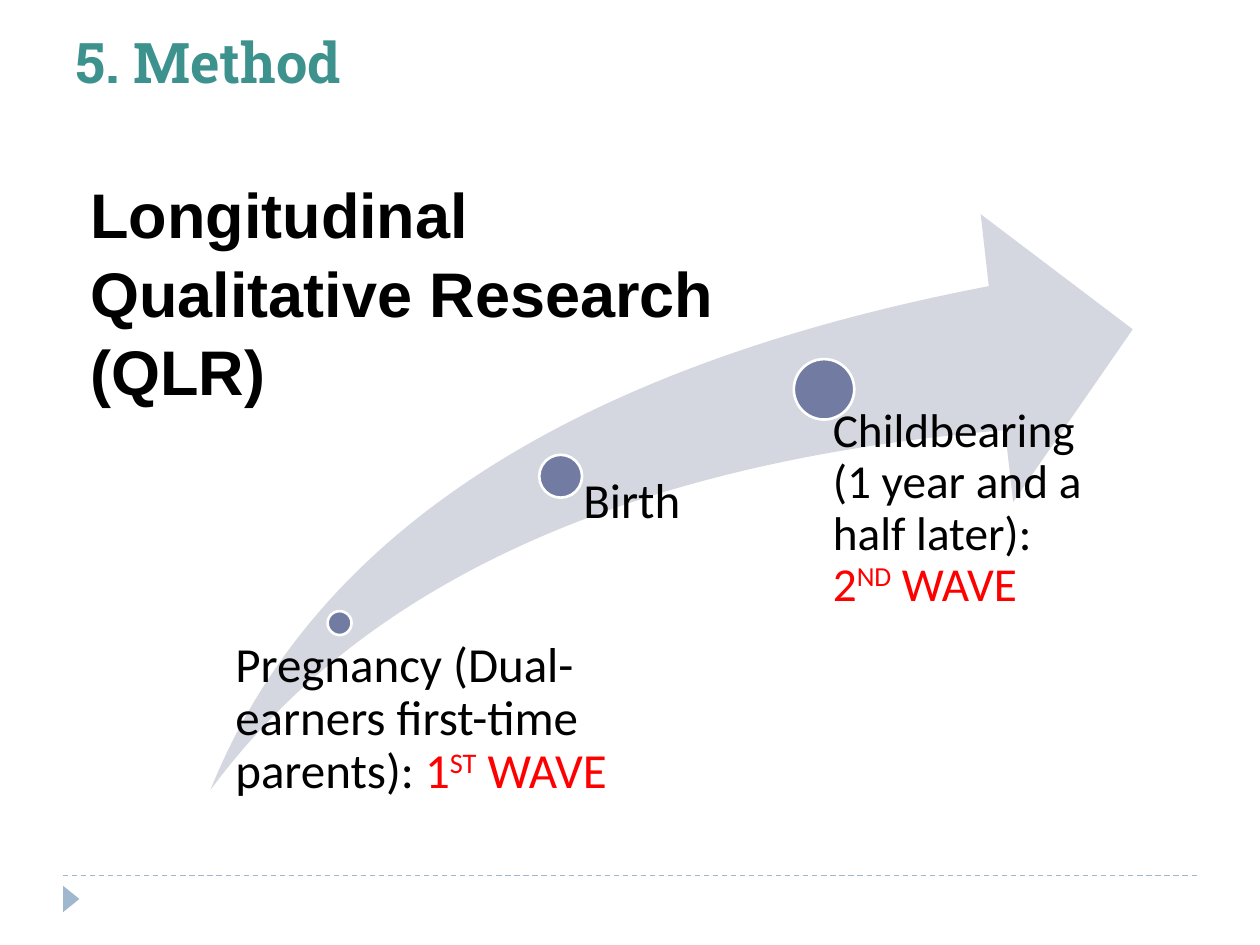
from lxml import etree
from pptx import Presentation
from pptx.dml.color import RGBColor
from pptx.enum.dml import MSO_LINE
from pptx.enum.shapes import MSO_CONNECTOR, MSO_SHAPE
from pptx.enum.text import MSO_ANCHOR, PP_ALIGN
from pptx.oxml.ns import qn
from pptx.util import Pt

PX = 9144  # EMU per px, 100 px to the inch
TITLE_ONLY = 5
SWOOSH = MSO_SHAPE.SWOOSH_ARROW
CIRCLE = MSO_SHAPE.OVAL
TRIANGLE = MSO_SHAPE.ISOSCELES_TRIANGLE
STRAIGHT = MSO_CONNECTOR.STRAIGHT
DASH = MSO_LINE.DASH
LEFT = PP_ALIGN.LEFT
TOP, MIDDLE = MSO_ANCHOR.TOP, MSO_ANCHOR.MIDDLE

COLORS = {
    "title": "3E928E",
    "text": "000000",
    "wave": "FF0000",
    "arrow": "D5D7E0",
    "dot": "727CA3",
    "outline": "FFFFFF",
    "footer": "9FB8CD",
}


def color(name):
    return RGBColor.from_string(COLORS[name])


class SlideBuilder:
    def __init__(self, slide, body_font):
        self.slide = slide
        self.shapes = slide.shapes
        self.body_font = body_font

    def add_runs(self, frame, runs, size, font=None, bold=False, anchor=TOP,
                 insets=(10, 5, 10, 5), spacing=1.0):
        """Fill a frame with one paragraph of (text, colour, baseline) runs."""
        frame.word_wrap = True
        frame.vertical_anchor = anchor
        (frame.margin_left, frame.margin_top,
         frame.margin_right, frame.margin_bottom) = [n * PX for n in insets]
        paragraph = frame.paragraphs[0]
        paragraph.alignment = LEFT
        paragraph.line_spacing = spacing
        for text, tint, baseline in runs:
            run = paragraph.add_run()
            run.text = text
            run.font.name = font or self.body_font
            run.font.size = Pt(size)
            run.font.bold = bold
            run.font.color.rgb = color(tint)
            if baseline:
                run._r.get_or_add_rPr().set("baseline", str(baseline * 1000))

    def title(self, box, runs, **style):
        title = self.shapes.title
        title.left, title.top, title.width, title.height = [n * PX for n in box]
        self.add_runs(title.text_frame, runs, **style)

    def text(self, box, runs, **style):
        textbox = self.shapes.add_textbox(*[n * PX for n in box])
        self.add_runs(textbox.text_frame, runs, **style)

    def shape(self, kind, box, fill, outline=None, rotation=0, adjustments=()):
        shape = self.shapes.add_shape(kind, *[n * PX for n in box])
        shape.shadow.inherit = False
        shape.rotation = rotation
        for index, value in enumerate(adjustments):
            shape.adjustments[index] = value
        shape.fill.solid()
        shape.fill.fore_color.rgb = color(fill)
        if outline:
            shape.line.color.rgb = color(outline)
            shape.line.width = Pt(1.5)
        else:
            shape.line.fill.background()

    def dashed_line(self, start, end, tint):
        line = self.shapes.add_connector(STRAIGHT, *[n * PX for n in start + end])
        line.line.color.rgb = color(tint)
        line.line.width = Pt(0.75)
        line.line.dash_style = DASH
        etree.SubElement(line._element.spPr, qn("a:effectLst"))


def wave(number, suffix):
    return [(number, "wave", 0), (suffix, "wave", 30), (" WAVE", "wave", 0)]


def main():
    prs = Presentation()
    prs.slide_width, prs.slide_height = 1000 * PX, 750 * PX
    slide = prs.slides.add_slide(prs.slide_layouts[TITLE_ONLY])
    builder = SlideBuilder(slide, "Calibri")

    # Footer rule and marker
    builder.dashed_line((50, 695), (950, 695), "footer")
    builder.shape(TRIANGLE, (46, 707, 21, 13), "footer", rotation=90)

    # Title
    builder.title((50, 17, 900, 108), [("5. Method", "title", 0)],
                  size=32, font="Roboto Slab", bold=True)

    # Timeline arrow
    builder.shape(SWOOSH, (167, 170, 732, 457), "arrow", adjustments=(0.25, 0.25))

    # Stages: dot (left, top, diameter), label box, left inset, size, runs
    stages = [
        ((260, 485, 19), (177, 508, 364, 132), 10, 28,
         [("Pregnancy (Dual-earners first-time parents): ", "text", 0)]
         + wave("1", "ST")),
        ((428, 361, 34), (445, 378, 176, 249), 18, 28,
         [("Birth", "text", 0)]),
        ((630, 285, 48), (636, 323, 232, 318), 25, 27,
         [("Childbearing (1 year and a half later): ", "text", 0)]
         + wave("2", "ND")),
    ]
    for (left, top, diameter), label_box, inset, size, runs in stages:
        builder.shape(CIRCLE, (left, top, diameter, diameter), "dot", "outline")
        builder.text(label_box, runs, size=size, insets=(inset, 0, 0, 0),
                     spacing=0.9)

    # Method name
    builder.text((62, 133, 523, 195),
                 [("Longitudinal Qualitative Research (QLR)", "text", 0)],
                 size=36, font="Arial", bold=True, anchor=MIDDLE, spacing=1.04)

    prs.save("out.pptx")


if __name__ == "__main__":
    main()
